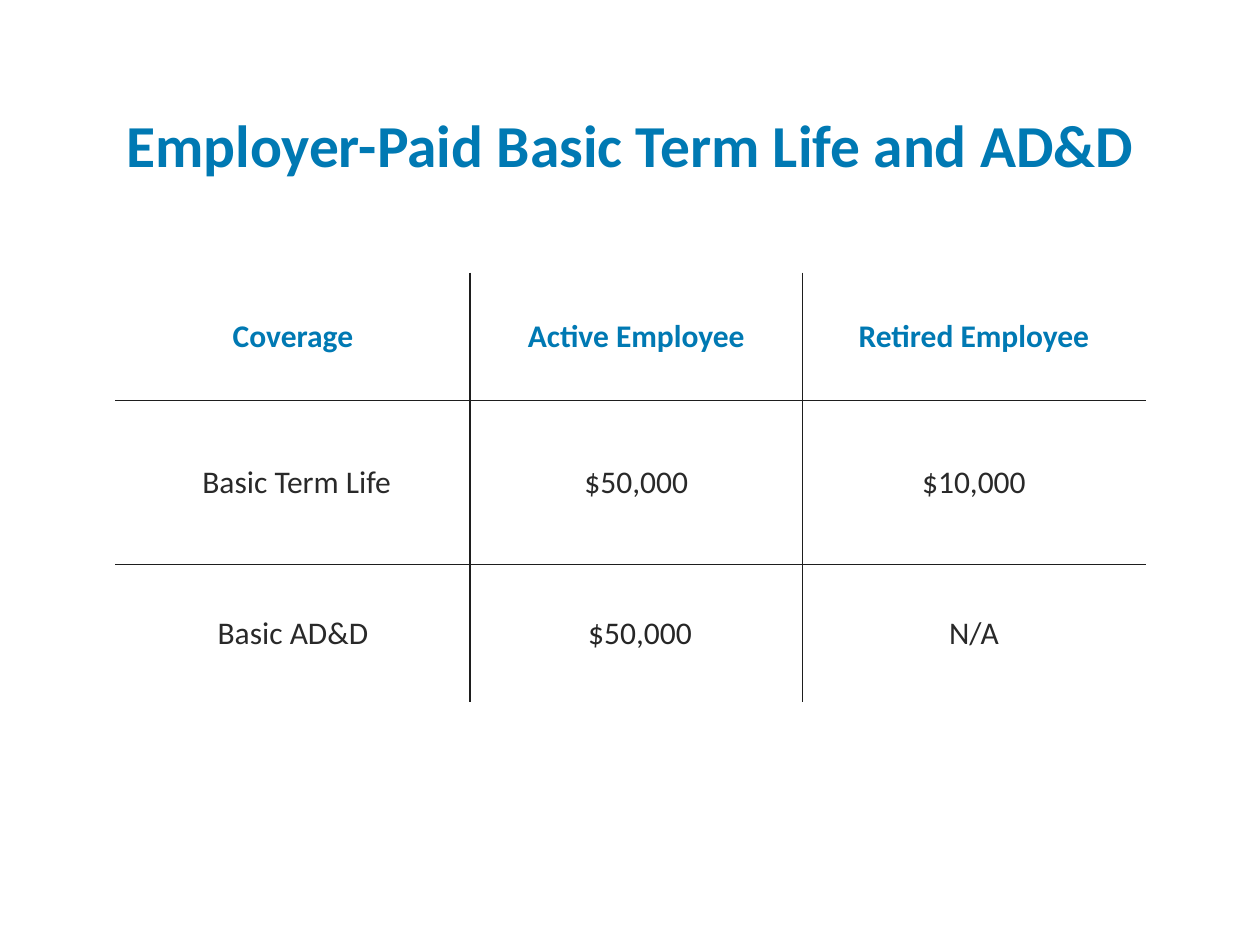
"""Build the employer-paid life and AD&D coverage slide."""
from lxml.etree import SubElement
from pptx import Presentation
from pptx.dml.color import RGBColor
from pptx.enum.text import MSO_ANCHOR, PP_ALIGN
from pptx.oxml.ns import qn
from pptx.util import Inches, Pt

BLUE = RGBColor(0x00, 0x79, 0xB3)
DARK = RGBColor(0x29, 0x29, 0x29)
DARKER = RGBColor(0x26, 0x26, 0x26)
RULE = RGBColor(0x1E, 0x1E, 0x1E)

COLUMN_WIDTHS = [2.81, 2.64, 2.72]
ROW_HEIGHTS = [1.01, 1.3, 1.1]
COVERAGE = [
    ["Coverage", "Active Employee", "Retired Employee"],
    ["Basic Term Life", "$50,000", "$10,000"],
    ["Basic AD&D", "$50,000", "N/A"],
]
NUDGED_CELLS = [(1, 0), (2, 1)]


def add_text(paragraph, text, size, color, bold):
    paragraph.alignment = PP_ALIGN.CENTER
    run = paragraph.add_run()
    run.text = text
    run.font.name = "Calibri"
    run.font.size = Pt(size)
    run.font.bold = bold
    run.font.color.rgb = color


def add_border(cell, side):
    line = SubElement(cell._tc.get_or_add_tcPr(), qn(f"a:ln{side}"), w=str(Pt(1)))
    fill = SubElement(line, qn("a:solidFill"))
    SubElement(fill, qn("a:srgbClr"), val=str(RULE))


presentation = Presentation()
presentation.slide_width = Inches(10)
presentation.slide_height = Inches(7.5)
slide = presentation.slides.add_slide(presentation.slide_layouts[6])

table = slide.shapes.add_table(
    len(ROW_HEIGHTS), len(COLUMN_WIDTHS), Inches(0.92), Inches(2.17),
    Inches(sum(COLUMN_WIDTHS)), Inches(sum(ROW_HEIGHTS)),
).table
table.first_row = False
table.horz_banding = False
for column, width in zip(table.columns, COLUMN_WIDTHS):
    column.width = Inches(width)
for row, height in zip(table.rows, ROW_HEIGHTS):
    row.height = Inches(height)

last_row = len(ROW_HEIGHTS) - 1
last_column = len(COLUMN_WIDTHS) - 1
for row_index, texts in enumerate(COVERAGE):
    for column_index, text in enumerate(texts):
        cell = table.cell(row_index, column_index)
        inner_sides = {
            "L": column_index > 0,
            "R": column_index < last_column,
            "T": row_index > 0,
            "B": row_index < last_row,
        }
        for side, is_inner in inner_sides.items():
            if is_inner:
                add_border(cell, side)
        cell.fill.background()
        cell.vertical_anchor = MSO_ANCHOR.MIDDLE
        if (row_index, column_index) in NUDGED_CELLS:
            cell.margin_left = Inches(0.16)
        is_header = row_index == 0
        color = BLUE if is_header else DARK
        if (row_index, column_index) == (2, 1):
            color = DARKER
        add_text(cell.text_frame.paragraphs[0], text, 18, color, is_header)

title = slide.shapes.add_textbox(Inches(0.5), Inches(0.92), Inches(9), Inches(1.25))
title_frame = title.text_frame
title_frame.word_wrap = True
title_frame.margin_left = title_frame.margin_right = 0
title_frame.margin_top = title_frame.margin_bottom = 0
title_paragraph = title_frame.paragraphs[0]
title_paragraph.line_spacing = 0.9
add_text(title_paragraph, "Employer-Paid Basic Term Life and AD&D", 34, BLUE, True)

presentation.save("out.pptx")
